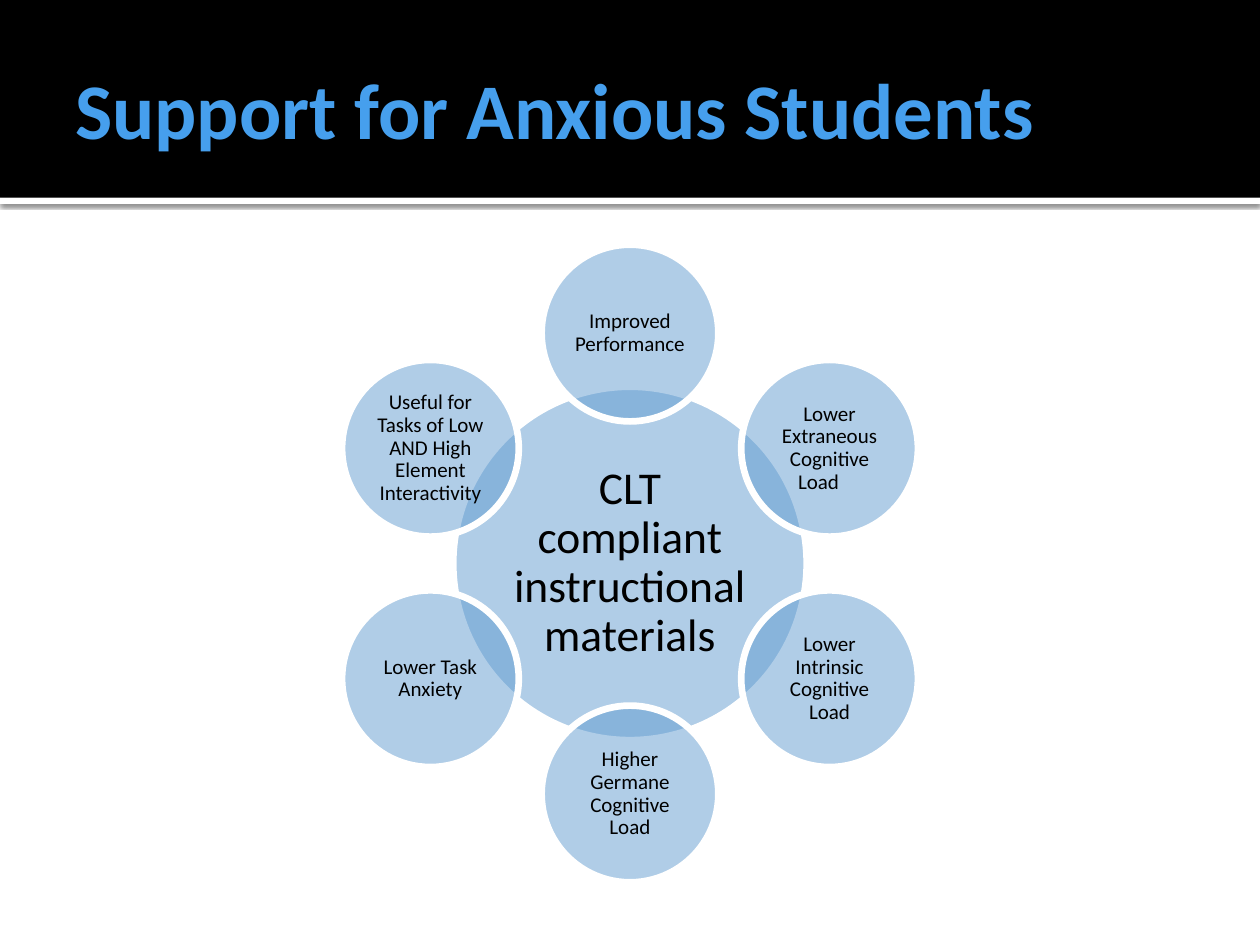
import math
from dataclasses import dataclass

from lxml import etree
from pptx import Presentation
from pptx.dml.color import RGBColor
from pptx.enum import shapes, text
from pptx.oxml import ns
from pptx.util import Pt

COLORS = {
    "band": "000000",
    "strip": "FFFFFF",
    "title": "469FED",
    "circle": "629DD1",
    "outline": "FFFFFF",
    "label": "000000",
}
FONT = "Calibri"
SLIDE_W, SLIDE_H = 720, 540
BAND_H, STRIP_H = 113, 3.6
HUB_X, HUB_Y = 360, 322
RING_RADIUS = 131.7


@dataclass
class Circle:
    label: str
    x: float
    y: float
    diameter: float
    size: float
    inset: float


def rgb(part: str) -> RGBColor:
    return RGBColor.from_string(COLORS[part])


def add_filled(slide, kind, left: float, top: float, width: float, height: float, part: str):
    shape = slide.shapes.add_shape(kind, Pt(left), Pt(top), Pt(width), Pt(height))
    shape.shadow.inherit = False
    shape.fill.solid()
    shape.fill.fore_color.rgb = rgb(part)
    shape.line.fill.background()
    return shape


def write(frame, words: str, size: float, part: str, insets: tuple, bold: bool = False):
    frame.word_wrap = True
    frame.vertical_anchor = text.MSO_ANCHOR.MIDDLE
    (frame.margin_left, frame.margin_top,
     frame.margin_right, frame.margin_bottom) = map(Pt, insets)
    paragraph = frame.paragraphs[0]
    run = paragraph.add_run()
    run.text = words
    run.font.name = FONT
    run.font.size = Pt(size)
    run.font.bold = bold
    run.font.color.rgb = rgb(part)
    return paragraph


def add_alpha(color, percent: int) -> None:
    etree.SubElement(color, ns.qn("a:alpha"), val=str(percent * 1000))


def add_drop_shadow(shape, blur: float, distance: float, percent: int) -> None:
    """Cast a soft black shadow straight down."""
    effects = shape.element.spPr.find(ns.qn("a:effectLst"))
    shadow = etree.SubElement(
        effects, ns.qn("a:outerShdw"), blurRad=str(Pt(blur)),
        dist=str(Pt(distance)), dir="5400000", rotWithShape="0")
    add_alpha(etree.SubElement(shadow, ns.qn("a:srgbClr"), val="000000"), percent)


def add_circle(slide, circle: Circle) -> None:
    radius = circle.diameter / 2
    oval = add_filled(slide, shapes.MSO_SHAPE.OVAL, circle.x - radius, circle.y - radius,
                      circle.diameter, circle.diameter, "circle")
    add_alpha(oval.element.spPr.find(ns.qn("a:solidFill"))[0], 50)
    oval.line.color.rgb = rgb("outline")
    oval.line.width = Pt(3.82)
    paragraph = write(oval.text_frame, circle.label, circle.size, "label", (circle.inset,) * 4)
    paragraph.alignment = text.PP_ALIGN.CENTER
    paragraph.line_spacing = 0.9


def add_header(slide, title: str) -> None:
    rectangle = shapes.MSO_SHAPE.RECTANGLE
    strip = add_filled(slide, rectangle, 0, BAND_H, SLIDE_W, STRIP_H, "strip")
    add_drop_shadow(strip, blur=2.5, distance=0.8, percent=60)
    add_filled(slide, rectangle, 0, 0, SLIDE_W, BAND_H, "band")
    heading = slide.shapes.add_textbox(Pt(36), Pt(12.2), Pt(648), Pt(98.6))
    write(heading.text_frame, title, 45, "title", (7.2, 3.6, 3.6, 3.6), bold=True)


def add_radial_venn(slide, hub: str, supports: list[str]) -> None:
    """Place the supports clockwise from the top around the hub."""
    add_circle(slide, Circle(hub, HUB_X, HUB_Y, 202, 26, 2.6))
    for index, support in enumerate(supports):
        angle = 2 * math.pi * index / len(supports)
        add_circle(slide, Circle(
            support,
            HUB_X + RING_RADIUS * math.sin(angle),
            HUB_Y - RING_RADIUS * math.cos(angle),
            101, 12, 1.2))


def main() -> None:
    deck = Presentation()
    deck.slide_width, deck.slide_height = Pt(SLIDE_W), Pt(SLIDE_H)
    slide = deck.slides.add_slide(deck.slide_layouts[6])
    add_header(slide, "Support for Anxious Students")
    add_radial_venn(slide, "CLT compliant instructional materials", [
        "Improved Performance",
        "Lower Extraneous Cognitive Load\t",
        "Lower Intrinsic Cognitive Load",
        "Higher Germane Cognitive Load",
        "Lower Task Anxiety",
        "Useful for Tasks of Low AND High Element Interactivity",
    ])
    deck.save("out.pptx")


if __name__ == "__main__":
    main()
